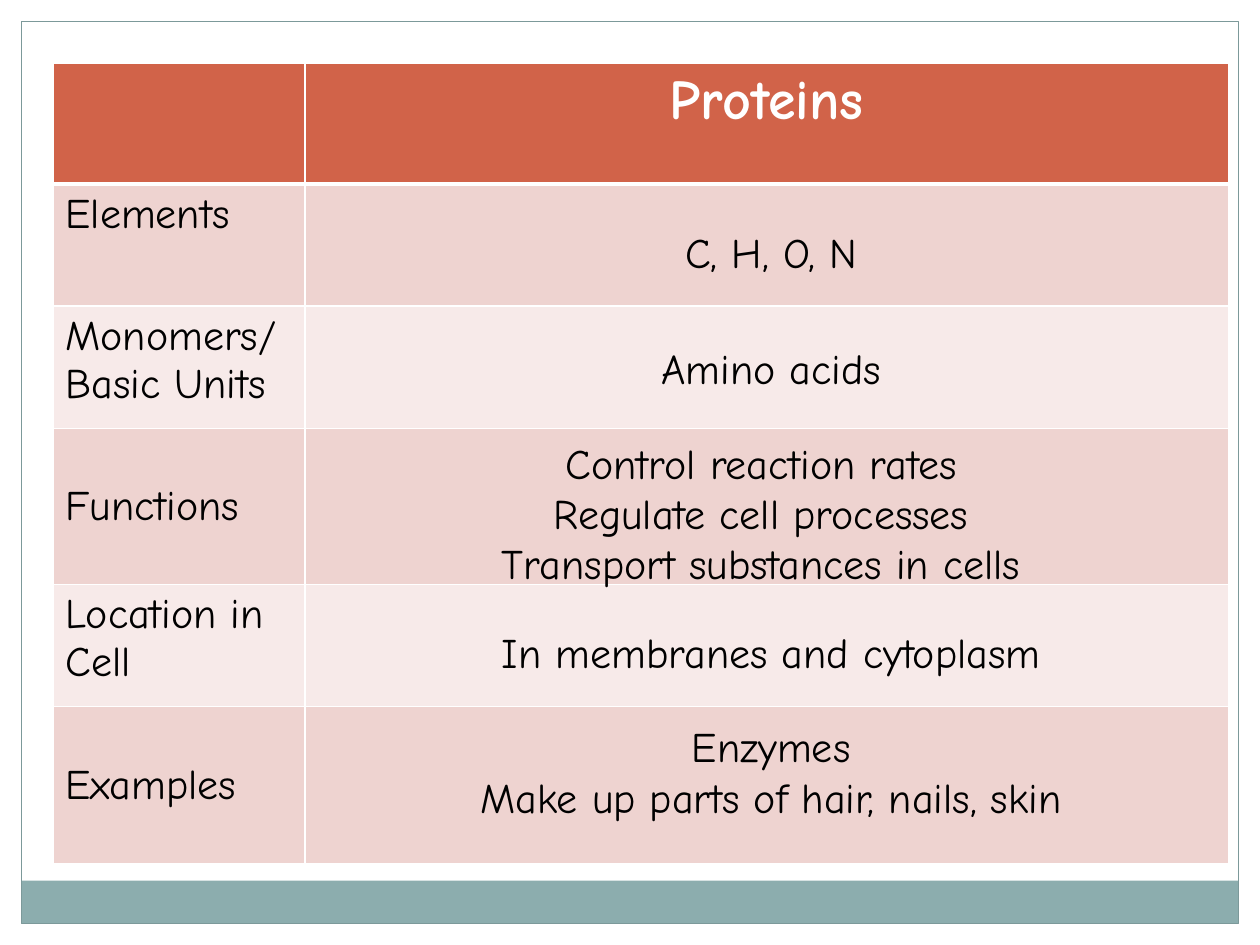
from dataclasses import dataclass

from lxml.etree import SubElement
from pptx import Presentation
from pptx.dml.color import RGBColor
from pptx.enum.shapes import MSO_SHAPE
from pptx.enum.text import MSO_ANCHOR, PP_ALIGN
from pptx.oxml.ns import qn
from pptx.util import Inches, Pt


@dataclass(frozen=True)
class Theme:
    font: str = "Comic Neue"
    white: str = "FFFFFF"
    ink: str = "000000"
    teal: str = "8CADAE"
    edge: str = "7C999A"
    head: str = "D16349"
    bands: tuple = ("EED3D0", "F7EAE9")
    title: int = 32
    body: int = 24


THEME = Theme()

# Row label, row height, anchor
ROWS = [
    ("Elements", 0.97, MSO_ANCHOR.TOP),
    ("Monomers/ Basic Units", 0.97, MSO_ANCHOR.TOP),
    ("Functions", 1.24, MSO_ANCHOR.MIDDLE),
    ("Location in Cell", 0.97, MSO_ANCHOR.TOP),
    ("Examples", 1.25, MSO_ANCHOR.MIDDLE),
]
HEAD = 0.96

# Left, top, height, lines
NOTES = [
    (2.58, 1.75, 0.5, ["C, H, O, N"]),
    (2.58, 2.67, 0.5, ["Amino acids"]),
    (2.5, 3.42, 1.31, ["Control reaction rates", "Regulate cell processes",
                       "Transport substances in cells"]),
    (2.58, 4.92, 0.5, ["In membranes and cytoplasm"]),
    (2.58, 5.67, 0.91, ["Enzymes", "Make up parts of hair, nails, skin"]),
]


def style(para, size, color, bold=False):
    for run in para.runs:
        run.font.name = THEME.font
        run.font.size = Pt(size)
        run.font.bold = bold
        run.font.color.rgb = RGBColor.from_string(color)


def add_rect(slide, box, fill=None, line=None):
    rect = slide.shapes.add_shape(MSO_SHAPE.RECTANGLE, *map(Inches, box))
    rect.shadow.inherit = False
    if fill:
        rect.fill.solid()
        rect.fill.fore_color.rgb = RGBColor.from_string(fill)
    else:
        rect.fill.background()
    if line:
        rect.line.color.rgb = RGBColor.from_string(line)
        rect.line.width = Pt(0.75)
    else:
        rect.line.fill.background()


def add_frame(slide, box):
    left, top, width, height = box
    right, full = left + width, top + height
    # White margins: top, right, left
    for edge in ((0, 0, right + left, top),
                 (right, 0, left, full + top),
                 (0, 0, left, full + top)):
        add_rect(slide, edge, fill=THEME.white)
    # Footer band and outline
    band = 0.34
    add_rect(slide, (left, full - band, width, band), fill=THEME.teal)
    add_rect(slide, box, line=THEME.edge)


def paint(cell, fill, base=1):
    # Borders come before the fill in the cell properties
    props = cell._tc.get_or_add_tcPr()
    for side, width in (("L", 1), ("R", 1), ("T", 1), ("B", base)):
        line = SubElement(props, qn(f"a:ln{side}"), w=str(Pt(width)))
        solid = SubElement(line, qn("a:solidFill"))
        SubElement(solid, qn("a:srgbClr"), val=THEME.white)
    cell.fill.solid()
    cell.fill.fore_color.rgb = RGBColor.from_string(fill)


def add_grid(slide, box):
    frame = slide.shapes.add_table(len(ROWS) + 1, 2, *map(Inches, box))
    table = frame.table
    label = 2
    table.columns[0].width = Inches(label)
    table.columns[1].width = Inches(box[2] - label)

    # Header row
    table.rows[0].height = Inches(HEAD)
    for cell in table.rows[0].cells:
        paint(cell, THEME.head, base=3)
    para = table.cell(0, 1).text_frame.paragraphs[0]
    para.text = "Proteins"
    para.alignment = PP_ALIGN.CENTER
    style(para, THEME.title, THEME.white, bold=True)

    # Banded body rows
    for row, (text, height, anchor) in enumerate(ROWS, 1):
        table.rows[row].height = Inches(height)
        for cell in table.rows[row].cells:
            paint(cell, THEME.bands[(row - 1) % 2])
        cell = table.cell(row, 0)
        cell.text_frame.text = text
        cell.vertical_anchor = anchor
        style(cell.text_frame.paragraphs[0], THEME.body, THEME.ink)


def add_note(slide, box, lines):
    frame = slide.shapes.add_textbox(*map(Inches, box)).text_frame
    frame.word_wrap = True
    frame.text = "\n".join(lines)
    for para in frame.paragraphs:
        para.alignment = PP_ALIGN.CENTER
        style(para, THEME.body, THEME.ink)


def main():
    deck = Presentation()
    deck.slide_width, deck.slide_height = Inches(10), Inches(7.5)
    slide = deck.slides.add_slide(deck.slide_layouts[6])
    add_frame(slide, (0.17, 0.17, 9.66, 7.16))
    add_grid(slide, (0.42, 0.5, 9.33, HEAD + sum(row[1] for row in ROWS)))
    for left, top, height, lines in NOTES:
        add_note(slide, (left, top, 7.08, height), lines)
    deck.save("out.pptx")


if __name__ == "__main__":
    main()
